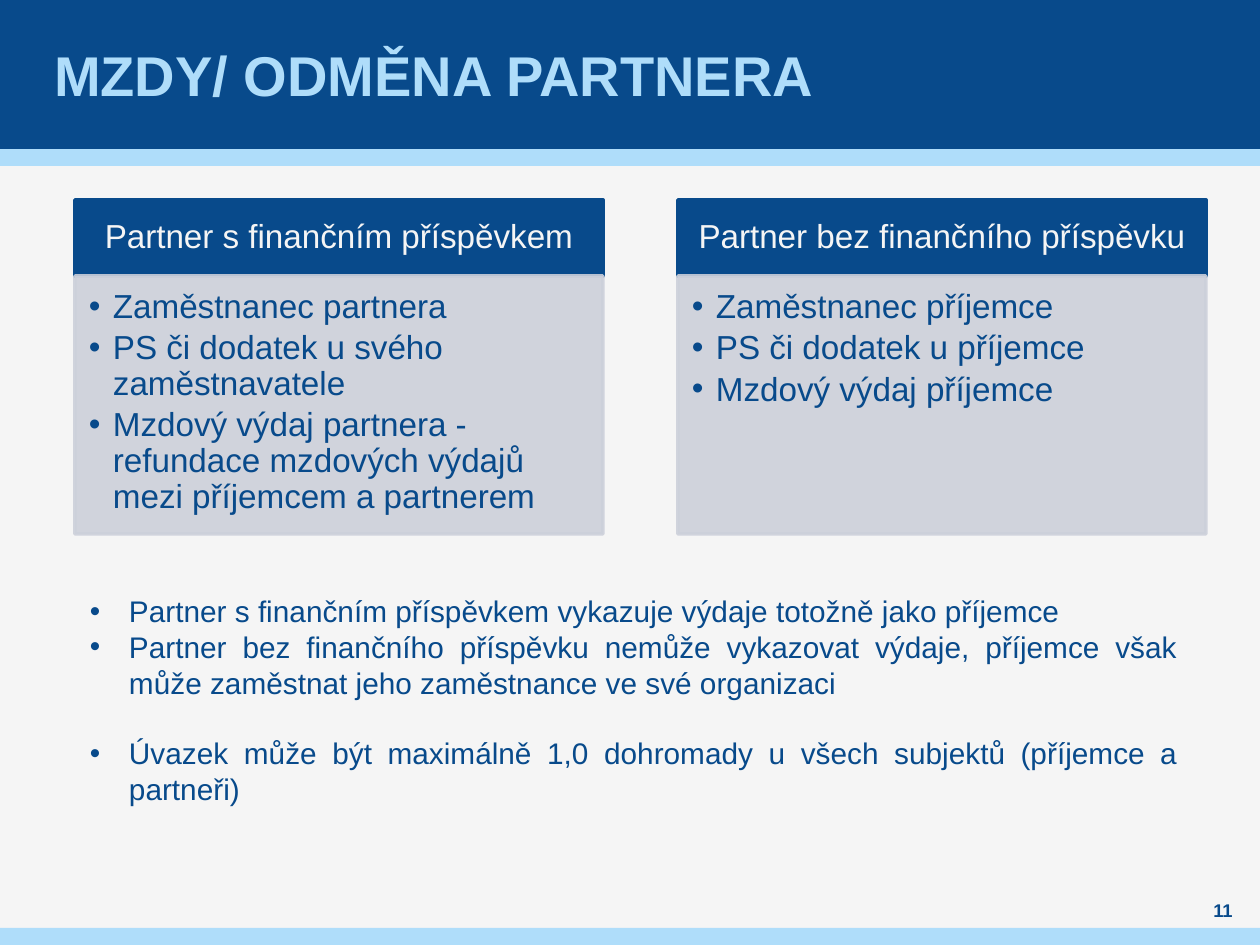
from lxml import etree
from pptx import Presentation
from pptx import util as u
from pptx.dml.color import RGBColor
from pptx.enum import shapes, text
from pptx.oxml.ns import qn

PX = 914400 / 126
THEME = {
    "navy": RGBColor.from_string("084A8B"),
    "sky": RGBColor.from_string("AFDDFA"),
    "paper": RGBColor.from_string("F5F5F5"),
    "grey": RGBColor.from_string("CCD0DA"),
    "font": "Arial",
    "title": 32,
    "panel": 19,
    "list": 17,
    "number": 10.5,
}


def add_block(page, bounds, color, line_width=0):
    box = page.shapes.add_shape(shapes.MSO_SHAPE.RECTANGLE, *[round(v * PX) for v in bounds])
    box.shadow.inherit = False
    box.fill.solid()
    box.fill.fore_color.rgb = THEME[color]
    if line_width:
        box.line.color.rgb = THEME[color]
        box.line.width = u.Pt(line_width)
    else:
        box.line.fill.background()
    return box


def write(box, lines, size, color, insets, bold=False, anchor="TOP", indent=0, **para_format):
    """Fill a shape with paragraphs; a non-zero indent (px) makes them bullets."""
    frame = box.text_frame
    left, top, right, bottom = [round(v * PX) for v in insets]
    frame_format = {
        "word_wrap": True,
        "auto_size": text.MSO_AUTO_SIZE.NONE,
        "vertical_anchor": text.MSO_ANCHOR[anchor],
        "margin_left": left,
        "margin_top": top,
        "margin_right": right,
        "margin_bottom": bottom,
    }
    for name, value in frame_format.items():
        setattr(frame, name, value)
    for i, line in enumerate(lines):
        para = frame.paragraphs[0] if i == 0 else frame.add_paragraph()
        for name, value in {"space_before": u.Pt(0), **para_format}.items():
            setattr(para, name, value)
        span = para.add_run()
        span.text = line
        font_format = {"name": THEME["font"], "size": u.Pt(THEME[size]), "bold": bold}
        for name, value in font_format.items():
            setattr(span.font, name, value)
        span.font.color.rgb = THEME[color]
        if indent:
            props = para._p.get_or_add_pPr()
            props.set("marL", str(round(indent * PX)))
            props.set("indent", str(round(-indent * PX)))
            etree.SubElement(props, qn("a:buFont")).set("typeface", THEME["font"])
            etree.SubElement(props, qn("a:buChar")).set("char", "•")


deck = Presentation()
deck.slide_width, deck.slide_height = u.Inches(10), u.Inches(7.5)
page = deck.slides.add_slide(deck.slide_layouts[1])
page.background.fill.solid()
page.background.fill.fore_color.rgb = THEME["paper"]
title, notes = page.placeholders

# Bands go behind the placeholders
bands = [((0, 149, 1260, 17), "sky"), ((0, 0, 1260, 149), "navy"), ((0, 928, 1260, 17), "sky")]
for bounds, color in bands:
    title._element.addprevious(add_block(page, bounds, color)._element)

for box, bounds in [(title, (49, 0, 1160, 149)), (notes, (77, 587, 1114, 265))]:
    box.left, box.top, box.width, box.height = [round(v * PX) for v in bounds]

left, center, justify = text.PP_ALIGN.LEFT, text.PP_ALIGN.CENTER, text.PP_ALIGN.JUSTIFY
write(title, ["MZDY/ ODMĚNA PARTNERA"], "title", "sky", (5, 0, 5, 0),
      bold=True, anchor="MIDDLE", alignment=left)

# Two comparison panels
panels = [
    ("Partner s finančním příspěvkem", [
        "Zaměstnanec partnera",
        "PS či dodatek u svého zaměstnavatele",
        "Mzdový výdaj partnera - refundace mzdových výdajů mezi příjemcem a partnerem",
    ]),
    ("Partner bez finančního příspěvku", [
        "Zaměstnanec příjemce",
        "PS či dodatek u příjemce",
        "Mzdový výdaj příjemce",
    ]),
]
for column, (heading, points) in enumerate(panels):
    x = 75 + column * 603
    header = add_block(page, (x, 200, 528, 76), "navy", 2)
    write(header, [heading], "panel", "paper", (19, 10, 19, 10),
          anchor="MIDDLE", alignment=center, line_spacing=0.9)
    body = add_block(page, (x, 276, 528, 258), "grey", 2)
    for color in body._element.spPr.iter(qn("a:srgbClr")):
        etree.SubElement(color, qn("a:alpha")).set("val", "90000")
    write(body, points, "panel", "navy", (14, 14, 19, 21), indent=24,
          alignment=left, line_spacing=0.9, space_after=u.Pt(3))

# Notes below the panels, the last one set apart
write(notes, [
    "Partner s finančním příspěvkem vykazuje výdaje totožně jako příjemce",
    "Partner bez finančního příspěvku nemůže vykazovat výdaje, příjemce však "
    "může zaměstnat jeho zaměstnance ve své organizaci",
    "Úvazek může být maximálně 1,0 dohromady u všech subjektů (příjemce a partneři)",
], "list", "navy", (13, 6, 13, 6), indent=39, alignment=justify)
notes.text_frame.paragraphs[-1].space_before = u.Pt(20)

number = page.shapes.add_textbox(*[round(v * PX) for v in (1191, 898, 64, 25)])
write(number, ["11"], "number", "navy", (0, 0, 0, 0),
      bold=True, anchor="MIDDLE", alignment=center)

deck.save("out.pptx")
